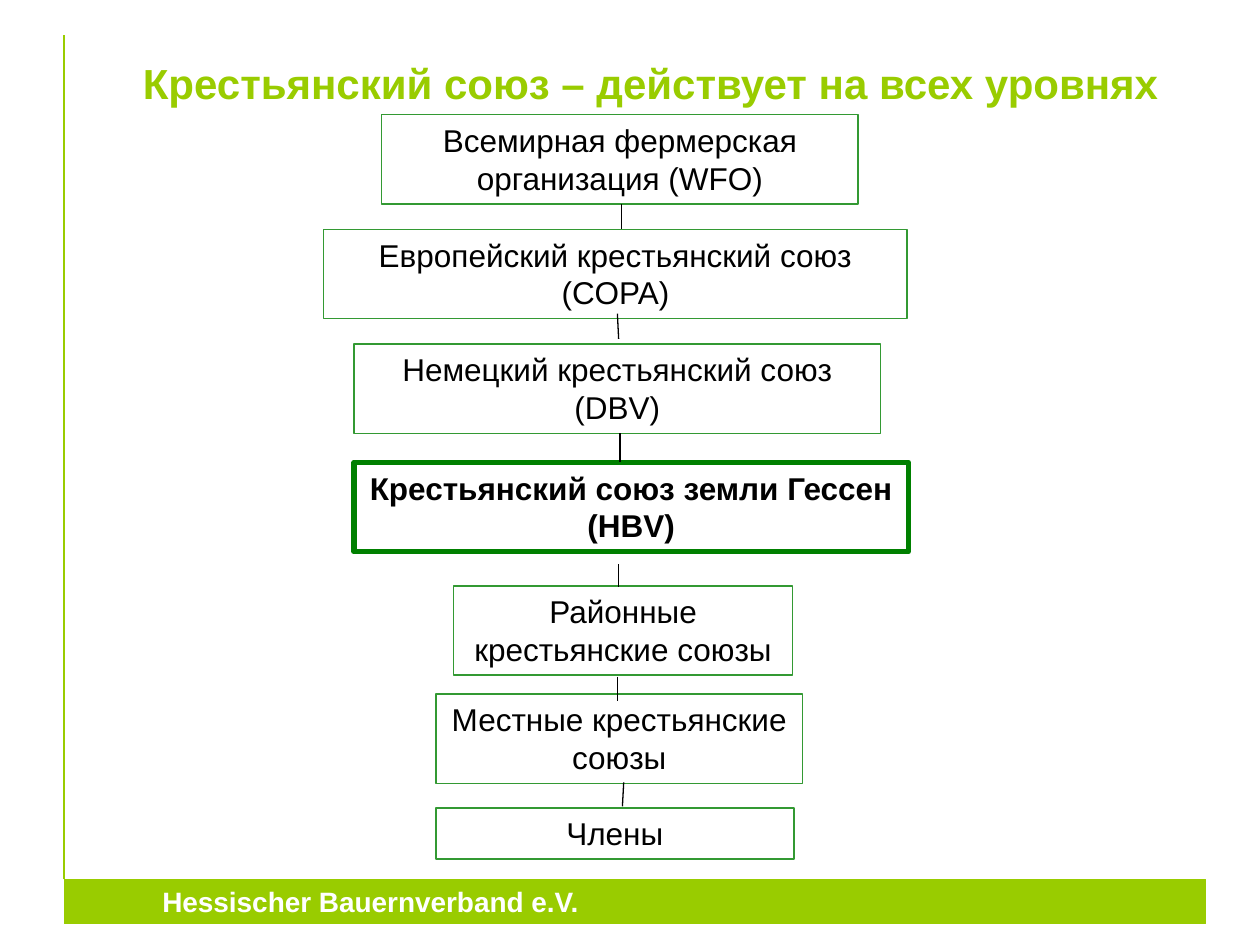
"""Build a slide with the levels of the farmers' union as a chain of boxes."""
from lxml.etree import SubElement
from pptx import Presentation
from pptx.dml.color import RGBColor
from pptx.enum.shapes import MSO_CONNECTOR, MSO_SHAPE
from pptx.enum.text import MSO_ANCHOR, PP_ALIGN
from pptx.oxml.ns import qn
from pptx.util import Inches, Pt

W, H = 10, 7.5
COLORS = {"lime": "99CC00", "green": "339933", "dark": "008000",
          "black": "000000", "white": "FFFFFF"}
TITLE = "Крестьянский союз – действует на всех уровнях"
FOOTER = "Hessischer Bauernverband e.V."
ONE_ROW, TWO_ROWS = 0.41, 0.71
HIGHLIGHT = {"line": "dark", "weight": 3, "bold": True}
LEVELS = [
    ("Всемирная фермерская организация (WFO)", 3.03, 0.91, 3.78, TWO_ROWS, {}),
    ("Европейский крестьянский союз (COPA)", 2.57, 1.82, 4.63, TWO_ROWS, {}),
    ("Немецкий крестьянский союз (DBV)", 2.81, 2.73, 4.18, TWO_ROWS, {}),
    ("Крестьянский союз земли Гессен (HBV)", 2.81, 3.67, 4.4, TWO_ROWS, HIGHLIGHT),
    ("Районные крестьянские союзы", 3.6, 4.65, 2.69, TWO_ROWS, {"weight": 1}),
    ("Местные крестьянские союзы", 3.46, 5.51, 2.91, TWO_ROWS, {"weight": 1}),
    ("Члены", 3.46, 6.41, 2.84, ONE_ROW, {"weight": 1}),
]
LINKS = [
    (4.93, 1.62, 4.93, 1.82), (4.9, 2.49, 4.91, 2.69), (4.92, 3.44, 4.92, 3.67),
    (4.91, 4.48, 4.91, 4.66), (4.9, 5.37, 4.9, 5.56), (4.95, 6.21, 4.94, 6.4),
]


def rgb(name):
    return RGBColor.from_string(COLORS[name])


def write(s, text, size=18, color="black", bold=False, align=PP_ALIGN.CENTER,
          spacing=None, indent=0, margin=0.1):
    tf = s.text_frame
    tf.word_wrap = True
    tf.vertical_anchor = MSO_ANCHOR.MIDDLE if indent else MSO_ANCHOR.TOP
    tf.margin_left = tf.margin_right = Inches(margin)
    p = tf.paragraphs[0]
    p.alignment = align
    if spacing:
        p.line_spacing = spacing
    if indent:
        p._p.get_or_add_pPr().set("indent", str(Inches(indent)))
    r = p.add_run()
    r.text = text
    r.font.name, r.font.size, r.font.bold = "Arial", Pt(size), bold
    r.font.color.rgb = rgb(color)


def add_box(slide, x, y, w, h, line="green", weight=0.75, fill=None):
    s = slide.shapes.add_shape(MSO_SHAPE.RECTANGLE, *map(Inches, (x, y, w, h)))
    s.shadow.inherit = False
    if fill:
        s.fill.solid()
        s.fill.fore_color.rgb = rgb(fill)
    else:
        s.fill.background()
    s.line.color.rgb = rgb(line)
    s.line.width = Pt(weight)
    return s


def add_line(slide, ends, color="black", weight=0.75):
    s = slide.shapes.add_connector(MSO_CONNECTOR.STRAIGHT, *map(Inches, ends))
    s.line.color.rgb = rgb(color)
    s.line.width = Pt(weight)
    SubElement(s._element.spPr, qn("a:effectLst"))


def main():
    prs = Presentation()
    prs.slide_width, prs.slide_height = Inches(W), Inches(H)
    slide = prs.slides.add_slide(prs.slide_layouts[6])

    left, bar_top = 0.51, 6.98
    bar = add_box(slide, left, bar_top, 9.06, 0.35, line="lime", fill="lime")
    write(bar, FOOTER, size=16, color="white", bold=True,
          align=PP_ALIGN.LEFT, indent=0.68)
    add_line(slide, (left, bar_top, left, 0.28), color="lime", weight=1)

    title = slide.shapes.add_textbox(*map(Inches, (1.03, 0.5, 8.27, 0.4)))
    write(title, TITLE, size=24, color="lime", bold=True, spacing=0.75, margin=0.05)

    for text, x, y, w, h, style in LEVELS:
        look = dict(style)
        bold = look.pop("bold", False)
        write(add_box(slide, x, y, w, h, **look), text, bold=bold)
    for ends in LINKS:
        add_line(slide, ends)
    prs.save("out.pptx")


if __name__ == "__main__":
    main()
